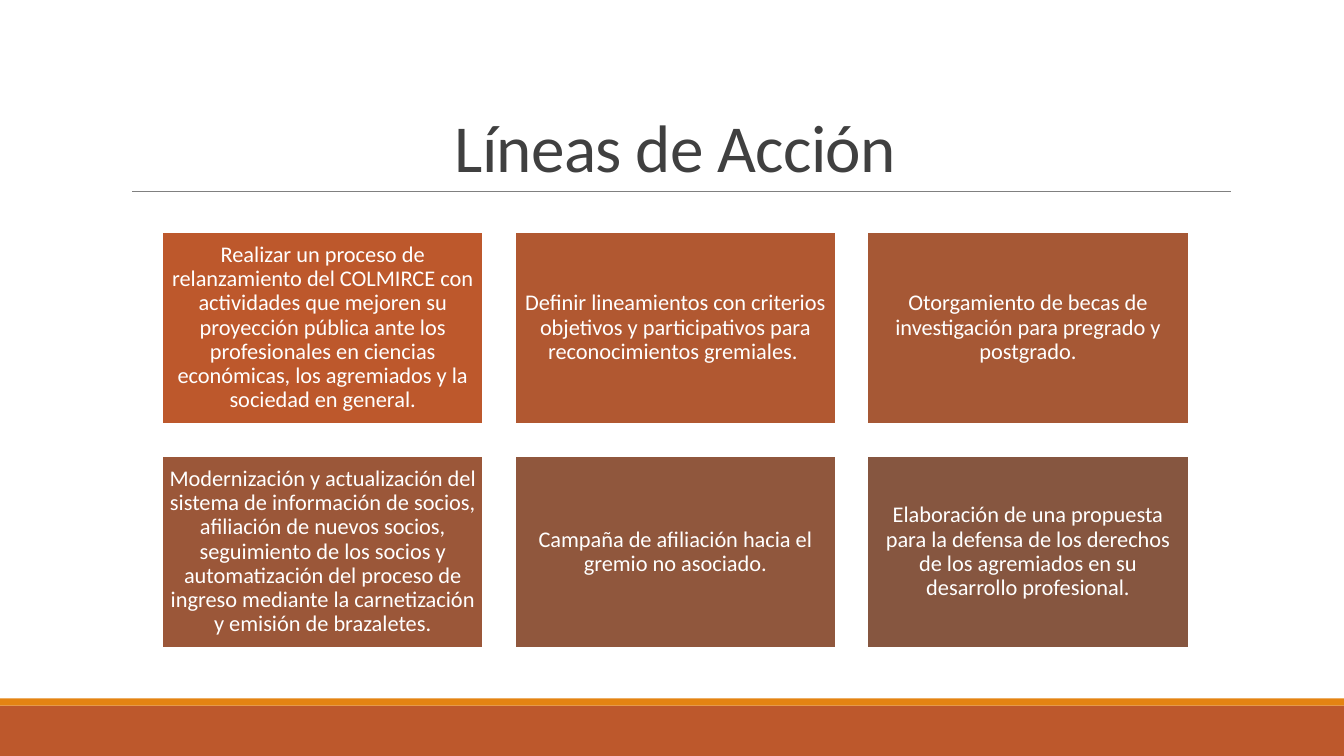
import pptx
import pptx.dml.color
import pptx.enum.shapes
import pptx.enum.text
import pptx.oxml
import pptx.oxml.ns
import pptx.util

Cm = pptx.util.Cm
Pt = pptx.util.Pt
PP_ALIGN = pptx.enum.text.PP_ALIGN
MSO_ANCHOR = pptx.enum.text.MSO_ANCHOR

SLIDE_WIDTH, SLIDE_HEIGHT = 33.87, 19.05
COLUMNS, ROWS, GAP = 3, 2, 0.8

ACTIONS = [
    ("BD582C", "Realizar un proceso de relanzamiento del COLMIRCE con actividades que mejoren "
               "su proyección pública ante los profesionales en ciencias económicas, "
               "los agremiados y la sociedad en general."),
    ("B15831", "Definir lineamientos con criterios objetivos y participativos para "
               "reconocimientos gremiales. "),
    ("A65835", "Otorgamiento de becas de investigación para pregrado y postgrado."),
    ("9B5739", "Modernización y actualización del sistema de información de socios, "
               "afiliación de nuevos socios, seguimiento de los socios y automatización "
               "del proceso de ingreso mediante la carnetización y emisión de brazaletes."),
    ("90573D", "Campaña de afiliación hacia el gremio no asociado."),
    ("865640", "Elaboración de una propuesta para la defensa de los derechos de los "
               "agremiados en su desarrollo profesional."),
]


def color(value):
    return pptx.dml.color.RGBColor.from_string(value)


def write(frame, text, size, ink, spacing, anchor):
    frame.text = text
    frame.word_wrap = True
    frame.vertical_anchor = anchor
    paragraph = frame.paragraphs[0]
    paragraph.alignment = PP_ALIGN.CENTER
    paragraph.line_spacing = spacing
    font = paragraph.runs[0].font
    font.name = "Calibri"
    font.size = Pt(size)
    font.color.rgb = color(ink)
    return font


def add_block(slide, left, top, width, height, fill):
    block = slide.shapes.add_shape(
        pptx.enum.shapes.MSO_SHAPE.RECTANGLE, Cm(left), Cm(top), Cm(width), Cm(height))
    block.shadow.inherit = False
    block.fill.solid()
    block.fill.fore_color.rgb = color(fill)
    block.line.fill.background()
    return block


def add_footer(slide, left, top, width, height):
    stripe = 0.18
    add_block(slide, left, top + stripe, width, height - stripe, "BD582C")
    add_block(slide, left, top, width, stripe, "E48312")


def add_heading(slide, left, top, width, height):
    heading = slide.shapes.add_textbox(Cm(left), Cm(top), Cm(width), Cm(height))
    font = write(heading.text_frame, "Líneas de Acción", 48, "404040", 0.85, MSO_ANCHOR.BOTTOM)
    font._element.set("spc", "-50")

    bottom = Cm(top + height)
    rule = slide.shapes.add_connector(
        pptx.enum.shapes.MSO_CONNECTOR.STRAIGHT,
        Cm(left + 0.28), bottom, Cm(left + width + 0.02), bottom)
    rule.line.color.rgb = color("808080")
    rule.line.width = Pt(0.5)
    rule._element.spPr.append(pptx.oxml.parse_xml(
        "<a:effectLst %s/>" % pptx.oxml.ns.nsdecls("a")))


def add_card(slide, left, top, width, height, fill, text):
    card = add_block(slide, left, top, width, height, fill)
    card.line.color.rgb = color("FFFFFF")
    card.line.width = Pt(1.25)
    frame = card.text_frame
    frame.margin_left = frame.margin_right = Cm(0.17)
    frame.margin_top = frame.margin_bottom = Cm(0.17)
    write(frame, text, 16, "FFFFFF", 0.9, MSO_ANCHOR.MIDDLE)


def add_actions(slide, left, top, width, height):
    card_width = (width - GAP * (COLUMNS - 1)) / COLUMNS
    card_height = (height - GAP * (ROWS - 1)) / ROWS
    for index, (fill, text) in enumerate(ACTIONS):
        row, column = divmod(index, COLUMNS)
        add_card(slide, left + column * (card_width + GAP), top + row * (card_height + GAP),
                 card_width, card_height, fill, text)


def main():
    deck = pptx.Presentation()
    deck.slide_width, deck.slide_height = Cm(SLIDE_WIDTH), Cm(SLIDE_HEIGHT)
    slide = deck.slides.add_slide(deck.slide_layouts[6])
    slide.background.fill.solid()
    slide.background.fill.fore_color.rgb = color("FFFFFF")
    add_footer(slide, 0, 17.6, SLIDE_WIDTH, SLIDE_HEIGHT - 17.6)
    add_heading(slide, 3.05, 0.79, 27.94, 4.04)
    add_actions(slide, 4.09, 5.84, 25.86, 10.49)
    deck.save("out.pptx")


if __name__ == "__main__":
    main()
